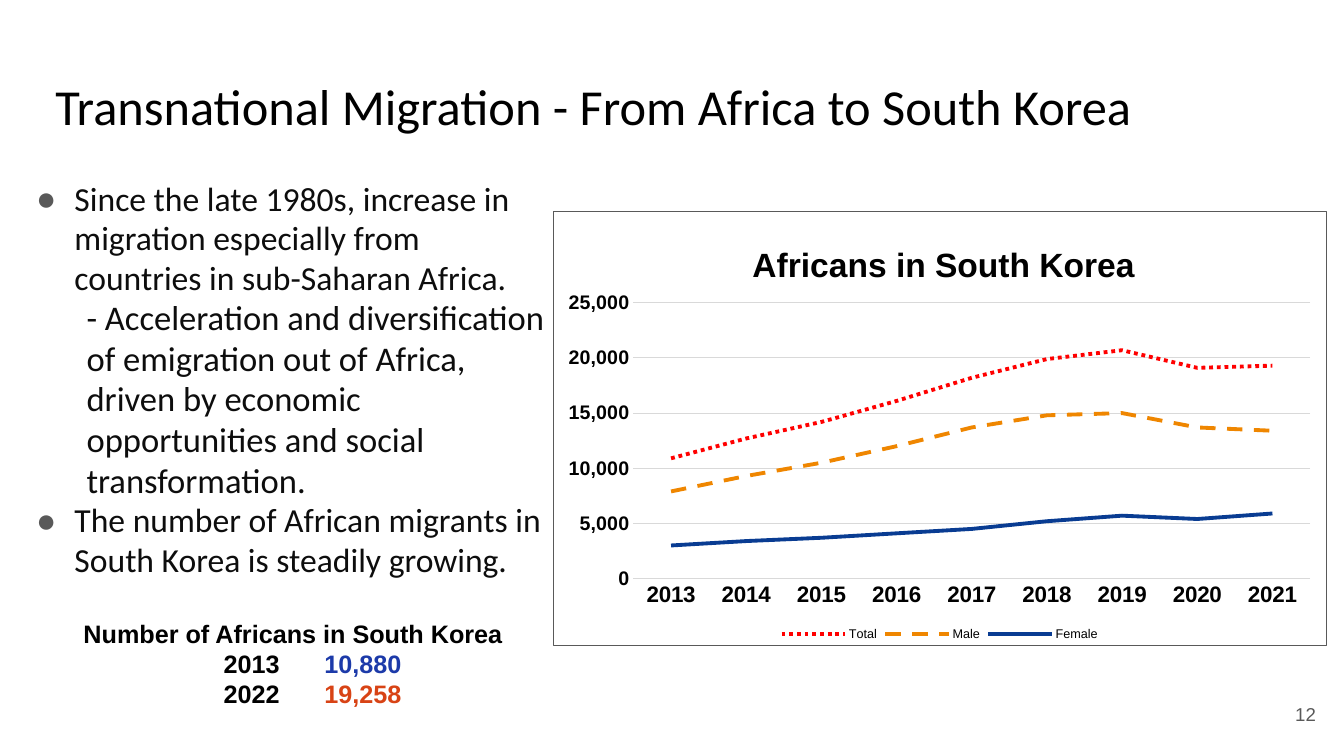
from lxml import etree
from pptx import Presentation
from pptx.chart.data import CategoryChartData
from pptx.dml.color import RGBColor
from pptx.enum import chart as charts, dml, text
from pptx.oxml import ns, parse_xml
from pptx.util import Inches, Pt

TITLE = "Transnational Migration - From Africa to South Korea"
BODY = [
    ("Since the late 1980s, increase in migration especially from countries "
     "in sub-Saharan Africa.", True),
    ("- Acceleration and diversification of emigration out of Africa, driven by "
     "economic opportunities and social transformation.", False),
    ("The number of African migrants in South Korea is steadily growing.", True),
]
COUNT_HEADING = "Number of Africans in South Korea"
COUNTS = [("2013", "10,880", "1C3AA9"), ("2022", "19,258", "D84315")]
PAGE_NUMBER = "12"

CHART_TITLE = "Africans in South Korea"
YEARS = [str(year) for year in range(2013, 2022)]
DASH = dml.MSO_LINE_DASH_STYLE
SERIES = [
    ("Total", "FF0000", DASH.ROUND_DOT,
     [10900, 12700, 14200, 16100, 18200, 19900, 20700, 19100, 19300]),
    ("Male", "EF8600", DASH.DASH,
     [7900, 9300, 10500, 12000, 13700, 14800, 15000, 13700, 13400]),
    ("Female", "093C92", DASH.SOLID,
     [3000, 3400, 3700, 4100, 4500, 5200, 5700, 5400, 5900]),
]
GRAY, LIGHT = "595959", "D9D9D9"


def color(value):
    return RGBColor.from_string(value)


def set_font(font, size, name="Arial", fill="000000", bold=False):
    font.size, font.name, font.bold = Pt(size), name, bold
    font.color.rgb = color(fill)


def add_box(page, left, top, width, height, anchor=text.MSO_ANCHOR.TOP):
    frame = page.shapes.add_textbox(*map(Inches, (left, top, width, height))).text_frame
    frame.word_wrap = True
    frame.vertical_anchor = anchor
    frame.margin_left = frame.margin_right = Inches(0.1)
    frame.margin_top = frame.margin_bottom = Inches(0.1)
    return frame


def next_para(frame, align=text.PP_ALIGN.LEFT):
    """Return the unused first paragraph, or a new one."""
    first = frame.paragraphs[0]
    para = frame.add_paragraph() if first.runs else first
    para.alignment = align
    return para


def add_span(para, words, **style):
    span = para.add_run()
    span.text = words
    set_font(span.font, **style)


def set_indent(para, left, first, bullet):
    props = para._p.get_or_add_pPr()
    props.set("marL", str(Inches(left)))
    props.set("indent", str(Inches(first)))
    if bullet:
        fill = etree.SubElement(props, ns.qn("a:buClr"))
        etree.SubElement(fill, ns.qn("a:srgbClr"), val=GRAY)
        etree.SubElement(props, ns.qn("a:buFont"), typeface="Arial")
        etree.SubElement(props, ns.qn("a:buChar"), char="●")
    else:
        etree.SubElement(props, ns.qn("a:buNone"))


def place(parent, after=None, inner=False, **fractions):
    """Give a chart part a manual layout in fractions of the chart."""
    for old in parent.findall(ns.qn("c:layout")):
        parent.remove(old)
    layout = etree.Element(ns.qn("c:layout"))
    manual = etree.SubElement(layout, ns.qn("c:manualLayout"))
    if inner:
        etree.SubElement(manual, ns.qn("c:layoutTarget"), val="inner")
    for side in ("x", "y"):
        etree.SubElement(manual, ns.qn(f"c:{side}Mode"), val="edge")
    for key, value in fractions.items():
        etree.SubElement(manual, ns.qn(f"c:{key}"), val=str(value))
    if after is None:
        parent.insert(0, layout)
    else:
        after.addnext(layout)


def add_line_chart(page):
    data = CategoryChartData(number_format="#,##0")
    data.categories = YEARS
    for name, _, _, values in SERIES:
        data.add_series(name, values)
    chart = page.shapes.add_chart(
        charts.XL_CHART_TYPE.LINE, Inches(5.48), Inches(2.09),
        Inches(7.68), Inches(4.32), data).chart
    set_font(chart.font, 10)

    chart.has_title = True
    add_span(chart.chart_title.text_frame.paragraphs[0], CHART_TITLE, size=24, bold=True)
    chart.chart_title.include_in_layout = False
    chart.has_legend = True
    chart.legend.position = charts.XL_LEGEND_POSITION.BOTTOM
    chart.legend.include_in_layout = False
    set_font(chart.legend.font, 9)

    years, people = chart.category_axis, chart.value_axis
    for axis, size in ((years, 16), (people, 14)):
        axis.major_tick_mark = axis.minor_tick_mark = charts.XL_TICK_MARK.NONE
        set_font(axis.tick_labels.font, size, bold=True)
    years.format.line.color.rgb = color(LIGHT)
    years.format.line.width = Pt(1)
    people.minimum_scale, people.maximum_scale, people.major_unit = 0, 25000, 5000
    people.tick_labels.number_format = "#,##0"
    people.tick_labels.number_format_is_linked = False
    people.format.line.fill.background()
    people.major_gridlines.format.line.color.rgb = color(LIGHT)
    people.major_gridlines.format.line.width = Pt(0.75)

    chart.plots[0].vary_by_categories = False
    for series, (_, fill, dash, _) in zip(chart.plots[0].series, SERIES):
        series.smooth = False
        series.marker.style = charts.XL_MARKER_STYLE.NONE
        line = series.format.line
        line.color.rgb = color(fill)
        line.width = Pt(2.75)
        line.dash_style = dash

    title = chart.chart_title._element
    place(title, after=title.find(ns.qn("c:tx")), x=0.25, y=0.06)
    body = chart._chartSpace.find(ns.qn("c:chart"))
    place(body.find(ns.qn("c:plotArea")), inner=True, x=0.104, y=0.211, w=0.875, h=0.635)
    body.addnext(parse_xml(
        f'<c:spPr {ns.nsdecls("c", "a")}>'
        '<a:solidFill><a:srgbClr val="FFFFFF"/></a:solidFill>'
        f'<a:ln w="{Pt(0.75)}"><a:solidFill><a:srgbClr val="{GRAY}"/></a:solidFill></a:ln>'
        '</c:spPr>'))


def main():
    deck = Presentation()
    deck.slide_width, deck.slide_height = Inches(13.33), Inches(7.5)
    page = deck.slides.add_slide(deck.slide_layouts[6])

    heading = add_box(page, 0.45, 0.65, 12.42, 0.84)
    add_span(next_para(heading), TITLE, size=36, name="Calibri")

    body = add_box(page, 0.14, 1.68, 5.45, 4.98)
    for words, bullet in BODY:
        para = next_para(body)
        para.line_spacing = 0.98
        set_indent(para, 0.5 if bullet else 0.62, -0.38 if bullet else 0, bullet)
        add_span(para, words, size=24 if bullet else 24.7, name="Calibri", fill="0D0D0D")

    counts = add_box(page, 0.73, 6.03, 4.74, 1.11)
    add_span(next_para(counts), COUNT_HEADING, size=18, bold=True)
    for year, count, fill in COUNTS:
        para = next_para(counts, text.PP_ALIGN.CENTER)
        add_span(para, year + "\t", size=18, bold=True)
        add_span(para, count, size=18, bold=True, fill=fill)

    number = add_box(page, 12.35, 6.8, 0.8, 0.57, text.MSO_ANCHOR.MIDDLE)
    add_span(next_para(number, text.PP_ALIGN.RIGHT), PAGE_NUMBER, size=13.3, fill=GRAY)

    add_line_chart(page)
    deck.save("out.pptx")


if __name__ == "__main__":
    main()
